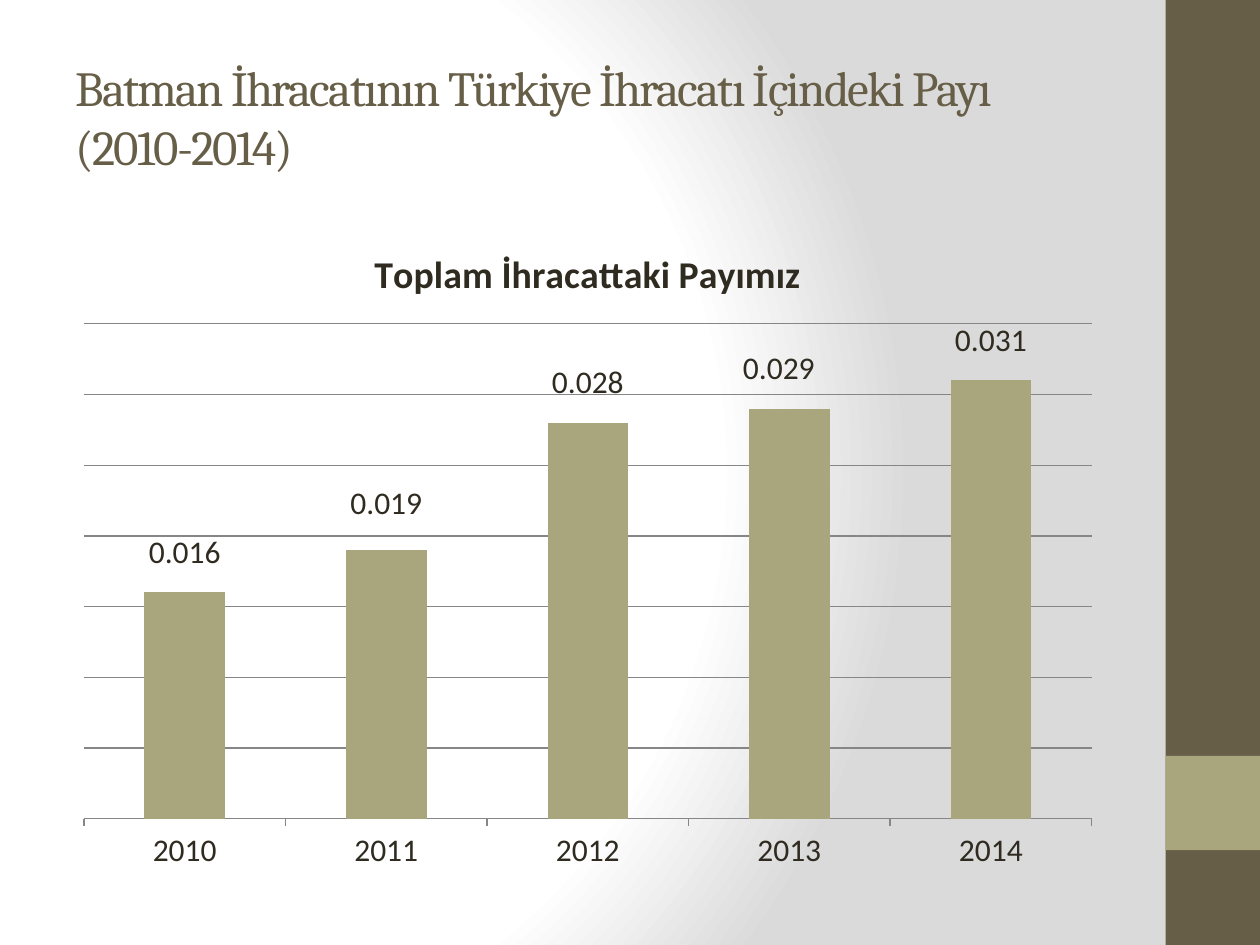
from dataclasses import dataclass

from lxml import etree
from pptx import Presentation
from pptx.chart.data import CategoryChartData
from pptx.dml.color import RGBColor
from pptx.enum import chart as ch, shapes, text
from pptx.oxml import parse_xml
from pptx.oxml.ns import nsdecls, qn
from pptx.util import Cm, Pt


@dataclass
class Theme:
    brown: str = "675E47"
    olive: str = "A9A57C"
    ink: str = "2F2B20"
    grid: str = "868686"
    pale: str = "FFFFFF"
    shade: str = "DADADA"
    head: str = "Cambria"
    body: str = "Calibri"
    big: float = 28
    mid: float = 21.6
    small: float = 18


def write(frame, words, size, font, color, bold=False, gap=0):
    """Put words in a text frame; gap is the letter spacing in points."""
    frame.text = words
    run = frame.paragraphs[0].runs[0]
    run.font.size, run.font.name, run.font.bold = Pt(size), font, bold
    run.font.color.rgb = RGBColor.from_string(color)
    if gap:
        run.font._element.set("spc", str(gap * 100))


look = Theme()
rgb = RGBColor.from_string
deck = Presentation()
deck.slide_width, deck.slide_height = Cm(25.4), Cm(19.05)
slide = deck.slides.add_slide(deck.slide_layouts[5])

# Background: round gradient
stops = "".join(
    f'<a:gs pos="{pos * 1000}"><a:srgbClr val="{color}"/></a:gs>'
    for pos, color in [(0, look.pale), (75, look.pale), (100, look.shade)])
slide.element.cSld.insert(0, parse_xml(
    f'<p:bg {nsdecls("p", "a")}><p:bgPr><a:gradFill rotWithShape="1">'
    f'<a:gsLst>{stops}</a:gsLst><a:path path="circle">'
    '<a:fillToRect l="20000" t="50000" r="100000" b="50000"/></a:path>'
    '</a:gradFill><a:effectLst/></p:bgPr></p:bg>'))

# Side band with its accent square
for top, height, color in [(0, 19.05, look.brown), (15.24, 1.9, look.olive)]:
    band = slide.shapes.add_shape(
        shapes.MSO_SHAPE.RECTANGLE, Cm(23.5), Cm(top), Cm(1.9), Cm(height))
    band.shadow.inherit = False
    band.fill.solid()
    band.fill.fore_color.rgb = rgb(color)
    band.line.fill.background()

# Title
title = slide.shapes.title
title.left, title.top, title.width, title.height = Cm(1.27), Cm(0.76), Cm(21.16), Cm(3.18)
write(title.text_frame, "Batman İhracatının Türkiye İhracatı İçindeki Payı (2010-2014)",
      look.big, look.head, look.brown, gap=-1)
title.text_frame.vertical_anchor = text.MSO_ANCHOR.MIDDLE
title.text_frame.paragraphs[0].alignment = text.PP_ALIGN.LEFT

# Chart
name = "Toplam İhracattaki Payımız"
shares = [0.016, 0.019, 0.028, 0.029, 0.031]
peak = 0.035
data = CategoryChartData()
data.categories = ["2010", "2011", "2012", "2013", "2014"]
data.add_series(name, shares)
chart = slide.shapes.add_chart(
    ch.XL_CHART_TYPE.COLUMN_STACKED, Cm(1.27), Cm(4.45), Cm(21.16), Cm(13.34), data).chart
chart.font.size, chart.font.name = Pt(look.small), look.body
chart.font.color.rgb = rgb(look.ink)
chart.has_legend = False
chart.has_title = True
write(chart.chart_title.text_frame, name, look.mid, look.body, look.ink, bold=True)
chart.chart_title.include_in_layout = False

scale = chart.value_axis
scale.minimum_scale, scale.maximum_scale, scale.major_unit = 0, peak, 0.005
scale.visible = False
scale.has_major_gridlines = True
years = chart.category_axis
years.major_tick_mark = ch.XL_TICK_MARK.OUTSIDE
for line in (scale.major_gridlines.format.line, years.format.line):
    line.color.rgb = rgb(look.grid)
    line.width = Pt(0.75)

plot = chart.plots[0]
plot.gap_width, plot.overlap, plot.vary_by_categories = 150, 100, False
bars = plot.series[0]
bars.format.fill.solid()
bars.format.fill.fore_color.rgb = rgb(look.olive)
bars.data_labels.show_value = True

# Labels move from the middle of each bar to just above it
plot_part = 0.75
shifts = [(0, 0.06), (0, 0.07), (0, 0.06), (-0.01, 0.06), (0, 0.06)]
for i, (share, (side, lift)) in enumerate(zip(shares, shifts)):
    bars.points[i].data_label.position = ch.XL_LABEL_POSITION.CENTER
    label = bars._element.findall(".//" + qn("c:dLbl"))[i]
    rise = share / peak * plot_part / 2 + lift
    layout = etree.Element(qn("c:layout"))
    spot = etree.SubElement(layout, qn("c:manualLayout"))
    etree.SubElement(spot, qn("c:x")).set("val", str(side))
    etree.SubElement(spot, qn("c:y")).set("val", f"{-rise:.3f}")
    label.insert(1, layout)

# No leader lines between the bars and their moved labels
labels = bars._element.find(qn("c:dLbls"))
for lead in labels.findall(qn("c:showLeaderLines")):
    lead.set("val", "0")
labels.append(parse_xml(
    f'<c:extLst {nsdecls("c")}><c:ext uri="{{CE6537A1-D6FC-4f65-9D91-7224C49458BB}}" '
    'xmlns:c15="http://schemas.microsoft.com/office/drawing/2012/chart">'
    '<c15:showLeaderLines val="0"/></c:ext></c:extLst>'))

deck.save("out.pptx")
